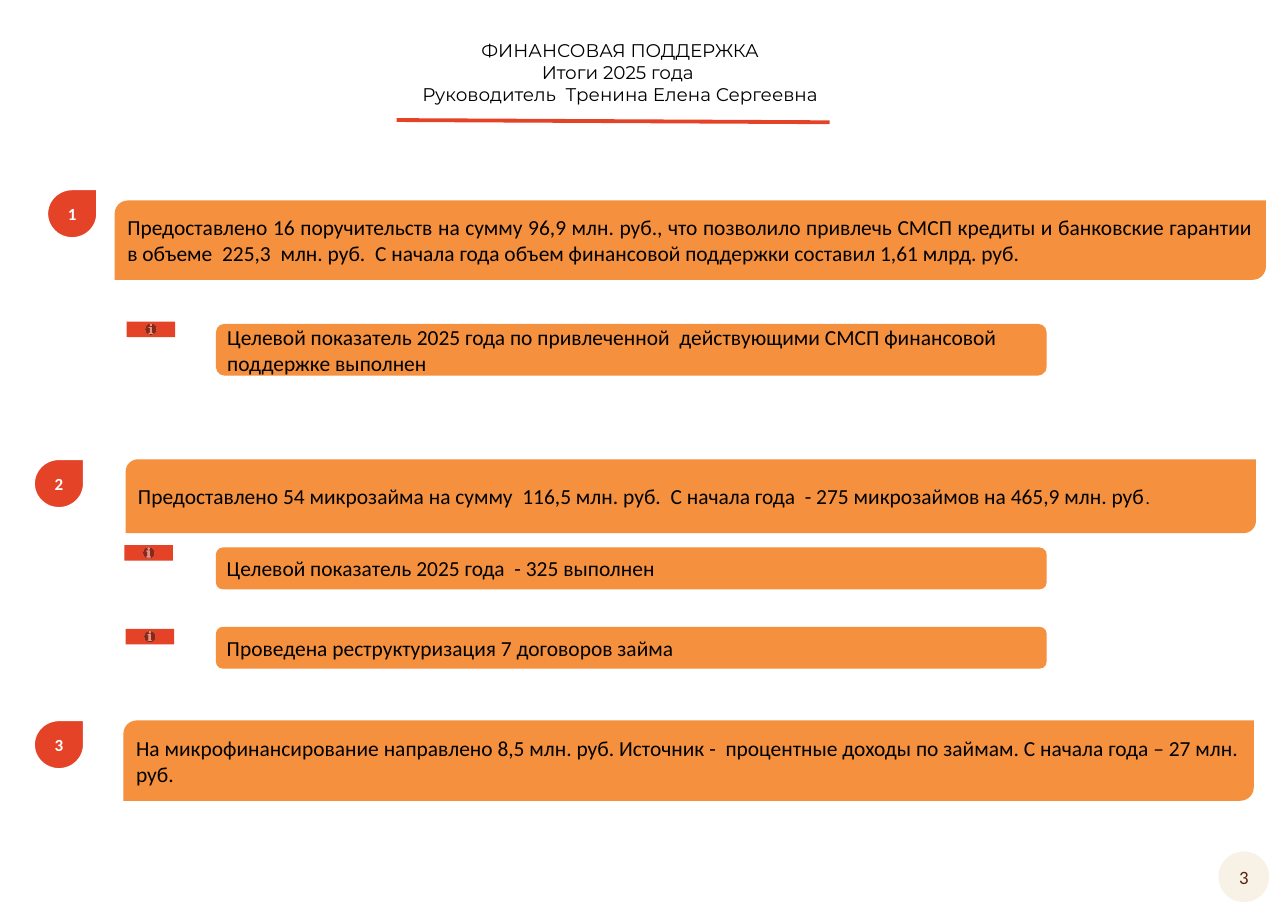
from pptx import Presentation
from pptx.dml.color import RGBColor
from pptx.enum.shapes import MSO_CONNECTOR, MSO_SHAPE as Shape
from pptx.enum.text import MSO_ANCHOR as Anchor, PP_ALIGN as Align
from pptx.oxml.ns import qn
from pptx.util import Inches, Pt
from lxml import etree

COLORS = {
    "red": "E44328",
    "orange": "F4903E",
    "cream": "F7F2E5",
    "brown": "562212",
    "black": "000000",
    "white": "FFFFFF",
}

# Left, top, width, height, alignment, text
RESULTS = [
    (1.04, 1.82, 10.45, 0.72, Align.JUSTIFY,
     "Предоставлено 16 поручительств на сумму 96,9 млн. руб., что позволило привлечь "
     "СМСП кредиты и банковские гарантии в объеме  225,3  млн. руб.  "
     "С начала года объем финансовой поддержки составил 1,61 млрд. руб."),
    (1.14, 4.17, 10.26, 0.67, Align.JUSTIFY,
     "Предоставлено 54 микрозайма на сумму  116,5 млн. руб.  "
     "С начала года  - 275 микрозаймов на 465,9 млн. руб"),
    (1.12, 6.54, 10.26, 0.73, Align.LEFT,
     "На микрофинансирование направлено 8,5 млн. руб. Источник -  "
     "процентные доходы по займам. С начала года – 27 млн. руб."),
]

# Top, height, text
TARGETS = [
    (2.94, 0.47, "Целевой показатель 2025 года по привлеченной  "
                 "действующими СМСП финансовой поддержке выполнен"),
    (4.97, 0.38, "Целевой показатель 2025 года  - 325 выполнен"),
    (5.69, 0.38, "Проведена реструктуризация 7 договоров займа"),
]

INFO_BUTTONS = [(1.15, 2.92), (1.13, 4.95), (1.14, 5.71)]
NUMBER_DROPS = [(0.43, 1.72), (0.31, 4.17), (0.31, 6.54)]


def color(name):
    return RGBColor.from_string(COLORS[name])


def style_span(span, size, color_name, font="Calibri", bold=False):
    span.font.name = font
    span.font.size = Pt(size)
    span.font.bold = bold
    span.font.color.rgb = color(color_name)


def set_frame(box, text, align, side=0.08, edge=0.04):
    frame = box.text_frame
    frame.word_wrap = True
    frame.vertical_anchor = Anchor.MIDDLE
    frame.margin_left = frame.margin_right = Inches(side)
    frame.margin_top = frame.margin_bottom = Inches(edge)
    frame.text = text
    for para in frame.paragraphs:
        para.alignment = align
    return frame.paragraphs


def add_figure(page, kind, left, top, width, height, fill, outline=None):
    box = page.shapes.add_shape(kind, Inches(left), Inches(top), Inches(width), Inches(height))
    box.shadow.inherit = False
    box.fill.solid()
    box.fill.fore_color.rgb = color(fill)
    if outline:
        box.line.color.rgb = color(outline)
        box.line.width = Pt(1)
    else:
        box.line.fill.background()
    return box


def add_panel(page, kind, left, top, width, height, align, text):
    box = add_figure(page, kind, left, top, width, height, "orange")
    para = set_frame(box, text, align)[0]
    style_span(para.runs[0], 14, "black")
    return para


def add_badge(page, kind, left, top, width, height, fill, text, size, ink, outline=None, bold=False):
    box = add_figure(page, kind, left, top, width, height, fill, outline)
    para = set_frame(box, text, Align.CENTER, 0, 0)[0]
    style_span(para.runs[0], size, ink, bold=bold)


def add_title(page):
    box = page.shapes.add_textbox(Inches(3.6), Inches(0.4), Inches(4.06), Inches(0.51))
    text = "ФИНАНСОВАЯ ПОДДЕРЖКА\nИтоги 2025 года \nРуководитель  Тренина Елена Сергеевна"
    for para in set_frame(box, text, Align.CENTER):
        style_span(para.runs[0], 12, "black", "Montserrat")


def add_underline(page):
    rule = page.shapes.add_connector(
        MSO_CONNECTOR.STRAIGHT, Inches(3.6), Inches(1.09), Inches(7.53), Inches(1.11))
    rule.line.color.rgb = color("red")
    rule.line.width = Pt(2.5)
    etree.SubElement(rule._element.spPr, qn("a:effectLst"))


def main():
    deck = Presentation()
    deck.slide_width, deck.slide_height = Inches(11.69), Inches(8.27)
    page = deck.slides.add_slide(deck.slide_layouts[6])

    # Page number
    add_badge(page, Shape.OVAL, 11.06, 7.73, 0.46, 0.46, "cream", "3", 12.3, "brown")

    # Heading
    add_title(page)
    add_underline(page)

    # Main results; the second ends with a smaller full stop
    result_paras = [add_panel(page, Shape.ROUND_2_DIAG_RECTANGLE, *result) for result in RESULTS]
    full_stop = result_paras[1].add_run()
    full_stop.text = "."
    style_span(full_stop, 11.1, "black")

    # Targets
    for top, height, text in TARGETS:
        add_panel(page, Shape.ROUNDED_RECTANGLE, 1.96, top, 7.54, height, Align.LEFT, text)

    # Markers
    for left, top in INFO_BUTTONS:
        add_figure(page, Shape.ACTION_BUTTON_INFORMATION, left, top, 0.44, 0.14, "red")
    for number, (left, top) in enumerate(NUMBER_DROPS, 1):
        add_badge(page, Shape.TEAR, left, top, 0.45, 0.44, "red", str(number), 11.1,
                  "white", outline="white", bold=True)

    deck.save("out.pptx")


if __name__ == "__main__":
    main()
